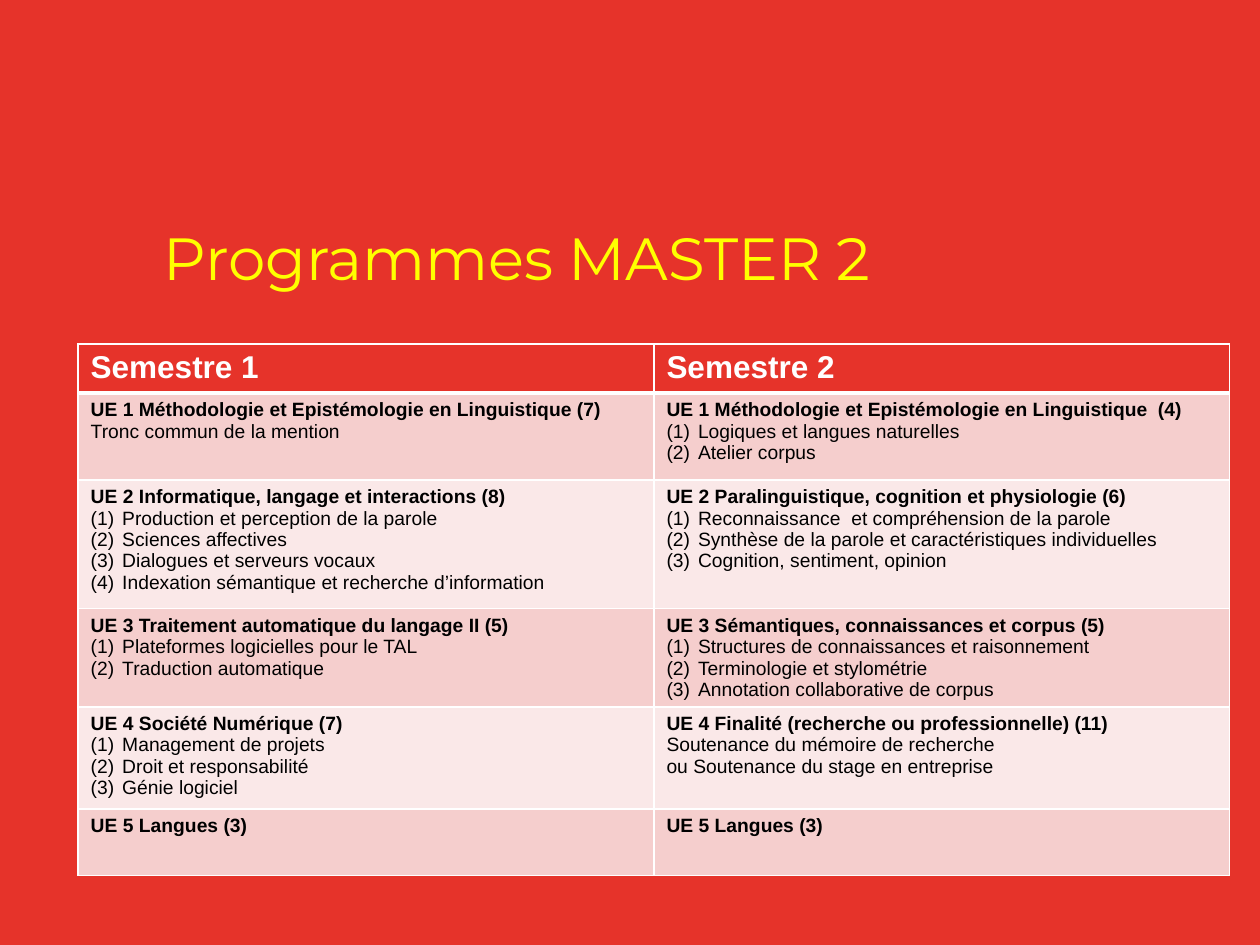
from lxml.etree import SubElement
from pptx import Presentation
from pptx.dml.color import RGBColor
from pptx.enum.text import MSO_ANCHOR, PP_ALIGN
from pptx.oxml.ns import qn
from pptx.util import Inches, Pt

COLORS = {
    "red": "E6332A",
    "yellow": "FFFF00",
    "white": "FFFFFF",
    "black": "000000",
    "rose": "F5CECD",
    "pale": "FAE8E8",
}
COLUMNS, ROWS = 100, 75
ROW_HEIGHTS = [3.9, 6.9, 10.2, 7, 8.1, 5.3]
HEADINGS = ["Semestre 1", "Semestre 2"]
UNITS = [
    [
        ("UE 1 Méthodologie et Epistémologie en Linguistique (7)", False,
         ["Tronc commun de la mention"]),
        ("UE 1 Méthodologie et Epistémologie en Linguistique  (4)", True,
         ["Logiques et langues naturelles", "Atelier corpus"]),
    ],
    [
        ("UE 2 Informatique, langage et interactions (8)", True,
         ["Production et perception de la parole", "Sciences affectives",
          "Dialogues et serveurs vocaux",
          "Indexation sémantique et recherche d’information"]),
        ("UE 2 Paralinguistique, cognition et physiologie (6)", True,
         ["Reconnaissance  et compréhension de la parole",
          "Synthèse de la parole et caractéristiques individuelles",
          "Cognition, sentiment, opinion"]),
    ],
    [
        ("UE 3 Traitement automatique du langage II (5)", True,
         ["Plateformes logicielles pour le TAL", "Traduction automatique"]),
        ("UE 3 Sémantiques, connaissances et corpus (5)", True,
         ["Structures de connaissances et raisonnement",
          "Terminologie et stylométrie",
          "Annotation collaborative de corpus"]),
    ],
    [
        ("UE 4 Société Numérique (7)", True,
         ["Management de projets", "Droit et responsabilité",
          "Génie logiciel"]),
        ("UE 4 Finalité (recherche ou professionnelle) (11)", False,
         ["Soutenance du mémoire de recherche",
          "ou Soutenance du stage en entreprise"]),
    ],
    [("UE 5 Langues (3)", False, [])] * 2,
]


class ProgrammeSlide:
    def __init__(self, deck):
        self.column = deck.slide_width / COLUMNS
        self.row = deck.slide_height / ROWS
        self.page = deck.slides.add_slide(deck.slide_layouts[5])
        self.paint(self.page.background.fill, "red")

    def place(self, left, top, width, height):
        return (int(left * self.column), int(top * self.row),
                int(width * self.column), int(height * self.row))

    def paint(self, fill, color):
        fill.solid()
        fill.fore_color.rgb = RGBColor.from_string(COLORS[color])

    def style(self, para, size, color, bold=False, font="Arial"):
        for span in para.runs:
            span.font.name = font
            span.font.size = Pt(size)
            span.font.bold = bold
            span.font.color.rgb = RGBColor.from_string(COLORS[color])

    def title(self, text, *area):
        box = self.page.shapes.title
        box.left, box.top, box.width, box.height = self.place(*area)
        frame = box.text_frame
        frame.text = text
        frame.word_wrap = True
        frame.vertical_anchor = MSO_ANCHOR.BOTTOM
        frame.margin_left = frame.margin_right = Inches(0.04)
        frame.margin_top = frame.margin_bottom = 0
        para = frame.paragraphs[0]
        para.alignment = PP_ALIGN.LEFT
        para.line_spacing = 0.9
        self.style(para, 34, "yellow", font="Montserrat")

    def number(self, para):
        properties = para._p.get_or_add_pPr()
        properties.set("marL", str(Inches(0.25)))
        properties.set("indent", str(-Inches(0.25)))
        SubElement(properties, qn("a:buFont"), typeface="Arial")
        SubElement(properties, qn("a:buAutoNum"), type="arabicParenBoth")

    def finish_cell(self, cell, color, top=1, bottom=1):
        properties = cell._tc.get_or_add_tcPr()
        for side, width in (("L", 1), ("R", 1), ("T", top), ("B", bottom)):
            line = SubElement(properties, qn(f"a:ln{side}"), w=str(Pt(width)))
            fill = SubElement(line, qn("a:solidFill"))
            SubElement(fill, qn("a:srgbClr"), val=COLORS["white"])
        self.paint(cell.fill, color)

    def unit(self, cell, heading, numbered, courses):
        frame = cell.text_frame
        frame.text = "\n".join([heading, *courses])
        for index, para in enumerate(frame.paragraphs):
            if numbered and index:
                self.number(para)
            self.style(para, 11, "black", bold=index == 0)

    def programme(self, left, top, width):
        area = self.place(left, top, width, sum(ROW_HEIGHTS))
        table = self.page.shapes.add_table(
            len(ROW_HEIGHTS), len(HEADINGS), *area).table
        for row, height in zip(table.rows, ROW_HEIGHTS):
            row.height = int(height * self.row)
        for column, heading in enumerate(HEADINGS):
            cell = table.cell(0, column)
            cell.text_frame.text = heading
            self.style(cell.text_frame.paragraphs[0], 18, "white", bold=True)
            self.finish_cell(cell, "red", bottom=3)
        for row, units in enumerate(UNITS, start=1):
            for column, unit in enumerate(units):
                cell = table.cell(row, column)
                self.unit(cell, *unit)
                self.finish_cell(cell, "rose" if row % 2 else "pale",
                                 top=3 if row == 1 else 1)


def main():
    deck = Presentation()
    deck.slide_width, deck.slide_height = Inches(10), Inches(7.5)
    slide = ProgrammeSlide(deck)
    slide.title("Programmes MASTER 2", 12.6, 10.8, 82.4, 12.5)
    slide.programme(6.2, 27.3, 91.4)
    deck.save("out.pptx")


if __name__ == "__main__":
    main()
